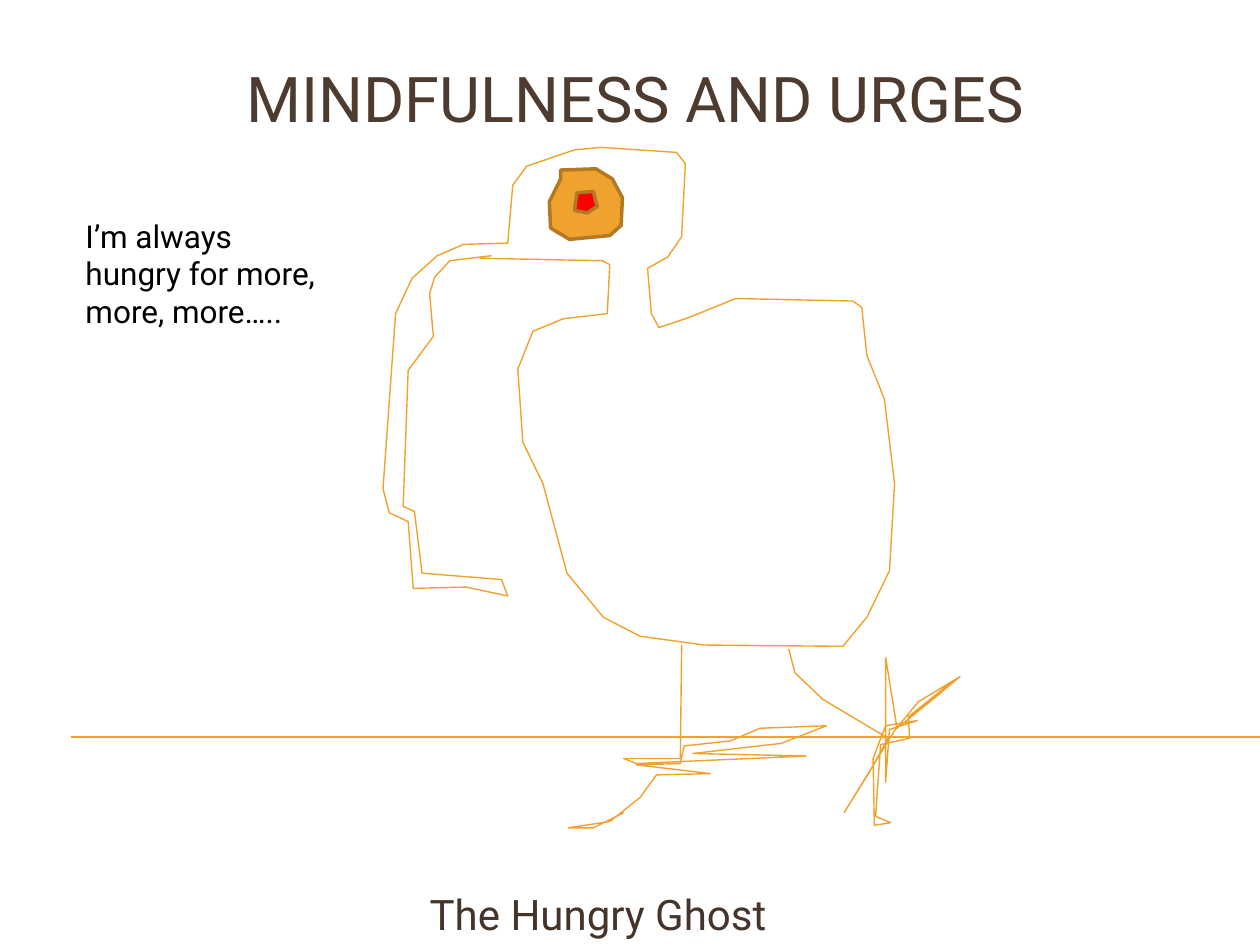
from pptx import Presentation
from pptx.dml.color import RGBColor
from pptx.enum.shapes import MSO_CONNECTOR
from pptx.enum.text import MSO_ANCHOR, PP_ALIGN
from pptx.oxml import parse_xml
from pptx.oxml.ns import nsdecls
from pptx.util import Inches, Pt

STRAIGHT = MSO_CONNECTOR.STRAIGHT
TOP, BOTTOM = MSO_ANCHOR.TOP, MSO_ANCHOR.BOTTOM
LEFT, CENTER = PP_ALIGN.LEFT, PP_ALIGN.CENTER

FONT = "Roboto"
ORANGE = RGBColor(0xF0, 0xA2, 0x2E)
OCHRE = RGBColor(0xB2, 0x78, 0x22)
RED = RGBColor(0xFF, 0x00, 0x00)
BROWN = RGBColor(0x4E, 0x3B, 0x30)
DARK_BROWN = RGBColor(0x45, 0x34, 0x2A)
BLACK = RGBColor(0x00, 0x00, 0x00)

SLIDE_W, SLIDE_H = 10, 7.5
GRID_COLUMNS = 1000  # the sketch is drawn on a grid of 1000 by 750 cells

BODY = [
    (390, 203), (357, 207), (345, 220), (341, 233), (344, 267), (324, 294),
    (320, 402), (329, 406), (335, 455), (398, 460), (403, 473), (370, 466),
    (328, 467), (324, 414), (309, 407), (304, 388), (314, 249), (327, 221),
    (347, 203), (368, 194), (403, 193), (407, 147), (418, 132), (456, 119),
    (477, 117), (537, 121), (544, 130), (541, 188), (530, 204), (514, 213),
    (517, 249), (523, 260), (547, 252), (584, 237), (677, 239), (684, 244),
    (688, 282), (702, 317), (710, 384), (706, 453), (688, 490), (669, 513),
    (559, 512), (508, 505), (479, 490), (450, 455), (431, 384), (415, 351),
    (411, 293), (423, 263), (447, 253), (482, 249), (484, 210), (478, 207),
    (381, 205),
]
EYE = [
    (445, 142), (436, 160), (437, 181), (452, 190), (484, 187), (493, 179),
    (494, 157), (486, 142), (473, 134), (445, 135),
]
PUPIL = [(458, 153), (456, 167), (466, 169), (474, 164), (471, 152)]
LEFT_LEG = [
    (541, 512), (540, 602), (495, 602), (505, 606), (640, 600), (550, 598),
    (620, 590), (656, 576), (603, 578), (580, 588), (543, 592), (540, 606),
    (505, 607), (564, 614), (521, 615), (508, 633), (484, 652), (451, 657),
    (471, 657), (495, 645),
]
RIGHT_LEG = [
    (626, 515), (631, 534), (653, 555), (705, 586), (690, 613), (670, 645),
    (710, 580), (729, 557), (762, 537), (743, 553), (712, 578), (703, 522),
    (703, 621), (706, 579), (728, 572), (703, 576), (693, 602), (694, 655),
    (707, 653), (695, 648), (699, 591), (722, 586), (721, 569), (757, 540),
]


def add_stroke(slide, box, points, line_color, line_width, fill_color=None):
    """Trace grid points inside the box; a filled stroke is closed."""
    left, top, width, _ = box
    cell = Inches(width) / GRID_COLUMNS
    shift_x, shift_y = Inches(left) / cell, Inches(top) / cell
    placed = [(x + shift_x, y + shift_y) for x, y in points]
    builder = slide.shapes.build_freeform(*placed[0], scale=cell)
    builder.add_line_segments(placed[1:], close=fill_color is not None)
    stroke = builder.convert_to_shape()
    stroke.shadow.inherit = False
    if fill_color is None:
        stroke.fill.background()
    else:
        stroke.fill.solid()
        stroke.fill.fore_color.rgb = fill_color
    stroke.line.color.rgb = line_color
    stroke.line.width = Pt(line_width)


def draw_ghost(slide, box):
    for outline in (BODY, LEFT_LEG, RIGHT_LEG):
        add_stroke(slide, box, outline, ORANGE, 0.79)
    add_stroke(slide, box, EYE, OCHRE, 2, ORANGE)
    add_stroke(slide, box, PUPIL, OCHRE, 2, RED)


def draw_ground(slide, box):
    left, top, width, height = box
    y = Inches(top + 0.78 * height)
    ground = slide.shapes.add_connector(
        STRAIGHT, Inches(left + 0.056 * width), y, Inches(left + width), y)
    ground.line.color.rgb = ORANGE
    ground.line.width = Pt(0.75)
    ground._element.spPr.append(parse_xml(f"<a:effectLst {nsdecls('a')}/>"))


def add_words(slide, box, words, size, color, align=LEFT, **frame_format):
    frame = slide.shapes.add_textbox(*map(Inches, box)).text_frame
    frame_values = {"word_wrap": True, "vertical_anchor": TOP, **frame_format}
    for name, value in frame_values.items():
        setattr(frame, name, value)
    paragraph = frame.paragraphs[0]
    paragraph.alignment = align
    run = paragraph.add_run()
    run.text = words
    for name, value in {"name": FONT, "size": Pt(size)}.items():
        setattr(run.font, name, value)
    run.font.color.rgb = color


def main():
    deck = Presentation()
    deck.slide_width, deck.slide_height = Inches(SLIDE_W), Inches(SLIDE_H)
    slide = deck.slides.add_slide(deck.slide_layouts[6])
    whole_slide = (0, 0, SLIDE_W, SLIDE_H)

    draw_ground(slide, whole_slide)
    add_words(slide, (0.42, 0.42, 9.25, 1.34), "MINDFULNESS AND URGES",
              36, BROWN, CENTER)
    add_words(slide, (0.42, 6.5, 9.25, 1), "The Hungry Ghost", 24, DARK_BROWN,
              vertical_anchor=BOTTOM, margin_left=Inches(2.99))
    draw_ghost(slide, whole_slide)
    add_words(slide, (0.58, 1.67, 2.08, 1.01),
              "I’m always hungry for more, more, more…..", 18, BLACK)
    deck.save("out.pptx")


if __name__ == "__main__":
    main()
